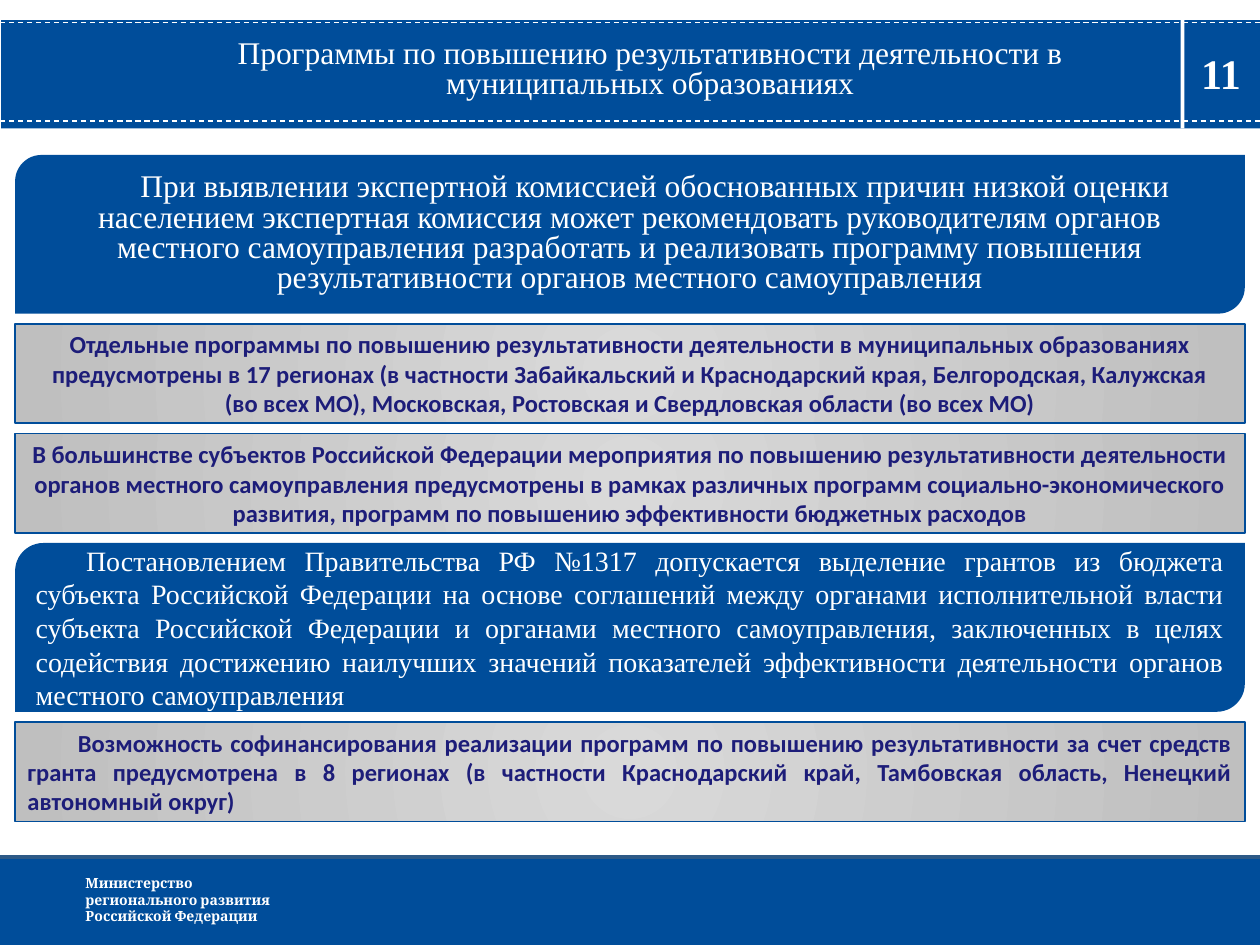
from dataclasses import dataclass

from lxml.etree import SubElement
from pptx import Presentation
from pptx.dml.color import RGBColor
from pptx.enum.dml import MSO_LINE
from pptx.enum.shapes import MSO_CONNECTOR, MSO_SHAPE
from pptx.enum.text import MSO_ANCHOR, MSO_AUTO_SIZE, PP_ALIGN
from pptx.oxml.ns import qn
from pptx.util import Inches, Pt


@dataclass(frozen=True)
class Theme:
    blue: RGBColor = RGBColor(0x00, 0x4D, 0x9A)
    edge: RGBColor = RGBColor(0x2D, 0x5A, 0x87)
    white: RGBColor = RGBColor(0xFF, 0xFF, 0xFF)
    navy: RGBColor = RGBColor(0x1D, 0x1D, 0x79)
    light_gray: RGBColor = RGBColor(0xD9, 0xD9, 0xD9)
    gray: RGBColor = RGBColor(0xBF, 0xBF, 0xBF)
    serif: str = "Times New Roman"
    sans: str = "Calibri"
    footer_font: str = "Cambria"
    number_size: int = 24
    heading_size: int = 18
    statement_size: int = 16
    fact_size: int = 14
    footer_size: int = 8


THEME = Theme()


def write_text(shape, lines, *, font, size, color=THEME.white, bold=False,
               align=PP_ALIGN.LEFT, anchor=MSO_ANCHOR.TOP, indent=0,
               line_spacing=1.0, margins=(0.1, 0.05)):
    """Fill a shape with one paragraph per line; indent is for first lines, in inches."""
    frame = shape.text_frame
    frame.word_wrap = True
    frame.auto_size = MSO_AUTO_SIZE.NONE
    frame.vertical_anchor = anchor
    frame.margin_left = frame.margin_right = Inches(margins[0])
    frame.margin_top = frame.margin_bottom = Inches(margins[1])
    frame.text = "\n".join(lines)
    for paragraph in frame.paragraphs:
        paragraph.alignment = align
        paragraph.line_spacing = line_spacing
        paragraph.space_before = Pt(0)
        if indent:
            properties = paragraph._p.get_or_add_pPr()
            properties.set("marL", "0")
            properties.set("indent", str(Inches(indent)))
        for run in paragraph.runs:
            run.font.name = font
            run.font.size = Pt(size)
            run.font.bold = bold
            run.font.color.rgb = color


class SlideBuilder:
    def __init__(self, slide, theme):
        self.slide = slide
        self.theme = theme

    def title(self, text, left, top, width, height):
        title = self.slide.shapes.title
        title.left, title.top = Inches(left), Inches(top)
        title.width, title.height = Inches(width), Inches(height)
        write_text(title, [text], font=self.theme.serif, size=self.theme.heading_size,
                   align=PP_ALIGN.CENTER, line_spacing=0.8, margins=(0.06, 0.03))
        # The title has to lie in front of the header band.
        self.slide.shapes._spTree.append(title._element)

    def block(self, left, top, width, height, color, kind=MSO_SHAPE.RECTANGLE):
        shape = self.slide.shapes.add_shape(
            kind, Inches(left), Inches(top), Inches(width), Inches(height))
        shape.shadow.inherit = False
        shape.fill.solid()
        shape.fill.fore_color.rgb = color
        shape.line.fill.background()
        return shape

    def gradient_block(self, left, top, width, height):
        """Outlined rectangle, lighter in the centre than at its ends."""
        shape = self.block(left, top, width, height, self.theme.light_gray)
        shape.fill.gradient()
        stops = shape.fill.gradient_stops
        for stop, color, position in zip(
                stops, (self.theme.light_gray, self.theme.gray), (0, 1)):
            stop.color.rgb = color
            stop.position = position
        gradient = shape._element.spPr.find(qn("a:gradFill"))
        gradient.remove(gradient.find(qn("a:lin")))
        radial = SubElement(gradient, qn("a:path"), {"path": "circle"})
        SubElement(radial, qn("a:fillToRect"), dict.fromkeys("ltrb", "50000"))
        shape.line.color.rgb = self.theme.blue
        shape.line.width = Pt(1)
        return shape

    def rule(self, y, color, width, dash=None):
        """Horizontal line across the slide."""
        line = self.slide.shapes.add_connector(
            MSO_CONNECTOR.STRAIGHT, Inches(0), Inches(y), Inches(10), Inches(y))
        line.line.color.rgb = color
        line.line.width = Pt(width)
        if dash:
            line.line.dash_style = dash
        SubElement(line._element.spPr, qn("a:effectLst"))

    def label(self, lines, left, top, width, height, **text_format):
        box = self.slide.shapes.add_textbox(
            Inches(left), Inches(top), Inches(width), Inches(height))
        write_text(box, lines, **text_format)

    def statement(self, lines, left, top, width, height, **text_format):
        """Blue panel with two rounded corners."""
        shape = self.block(left, top, width, height, self.theme.blue,
                           MSO_SHAPE.ROUND_2_DIAG_RECTANGLE)
        write_text(shape, lines, font=self.theme.serif, anchor=MSO_ANCHOR.MIDDLE,
                   indent=0.4, **text_format)

    def fact(self, lines, left, top, width, height, **text_format):
        """Gray panel with bold text."""
        shape = self.gradient_block(left, top, width, height)
        write_text(shape, lines, font=self.theme.sans, size=self.theme.fact_size,
                   color=self.theme.navy, bold=True, anchor=MSO_ANCHOR.MIDDLE,
                   **text_format)


def main():
    presentation = Presentation()
    presentation.slide_width, presentation.slide_height = Inches(10), Inches(7.5)
    slide = presentation.slides.add_slide(presentation.slide_layouts[5])
    builder = SlideBuilder(slide, THEME)

    builder.block(0.01, 0.16, 9.99, 0.86, THEME.blue)
    for y in (0.18, 0.96):
        builder.rule(y, THEME.white, 0.75, MSO_LINE.DASH)
    builder.title("Программы по повышению результативности деятельности в "
                  "муниципальных образованиях", 0.98, 0.29, 8.36, 0.85)
    builder.block(9.37, 0.15, 0.03, 0.87, THEME.white)
    builder.label(["11"], 9.38, 0.33, 0.62, 0.5, font=THEME.serif,
                  size=THEME.number_size, bold=True, align=PP_ALIGN.CENTER)

    builder.block(0, 6.8, 10, 0.7, THEME.blue)
    builder.rule(6.8, THEME.edge, 2)
    builder.label(["Министерство", "регионального развития", "Российской Федерации"],
                  0.58, 6.89, 2.55, 0.5, font=THEME.footer_font,
                  size=THEME.footer_size, bold=True)

    centered = {"align": PP_ALIGN.CENTER}
    justified = {"align": PP_ALIGN.JUSTIFY}
    panels = [
        (builder.statement, 1.26, [
            "При выявлении экспертной комиссией обоснованных причин низкой оценки "
            "населением экспертная комиссия может рекомендовать руководителям органов "
            "местного самоуправления разработать и реализовать программу повышения "
            "результативности органов местного самоуправления"],
         {**centered, "size": THEME.heading_size, "line_spacing": 0.8}),
        (builder.fact, 0.79, [
            "Отдельные программы по повышению результативности деятельности в "
            "муниципальных образованиях предусмотрены в 17 регионах (в частности "
            "Забайкальский и Краснодарский края, Белгородская, Калужская",
            "(во всех МО), Московская, Ростовская и Свердловская области (во всех МО)"],
         centered),
        (builder.fact, 0.79, [
            "В большинстве субъектов Российской Федерации мероприятия по повышению "
            "результативности деятельности органов местного самоуправления предусмотрены "
            "в рамках различных программ социально-экономического развития, программ по "
            "повышению эффективности бюджетных расходов"],
         centered),
        (builder.statement, 1.34, [
            "Постановлением Правительства РФ №1317 допускается выделение грантов из "
            "бюджета субъекта Российской Федерации на основе соглашений между органами "
            "исполнительной власти субъекта Российской Федерации и органами местного "
            "самоуправления, заключенных в целях содействия достижению наилучших значений "
            "показателей эффективности деятельности органов местного самоуправления"],
         {**justified, "size": THEME.statement_size}),
        (builder.fact, 0.79, [
            "Возможность софинансирования реализации программ по повышению "
            "результативности за счет средств гранта предусмотрена в 8 регионах "
            "(в частности Краснодарский край, Тамбовская область, Ненецкий автономный "
            "округ)"],
         {**justified, "indent": 0.4}),
    ]
    top, gap = 1.23, 0.08
    for add_panel, height, lines, text_format in panels:
        add_panel(lines, 0.12, top, 9.76, height, **text_format)
        top += height + gap

    presentation.save("out.pptx")


if __name__ == "__main__":
    main()
